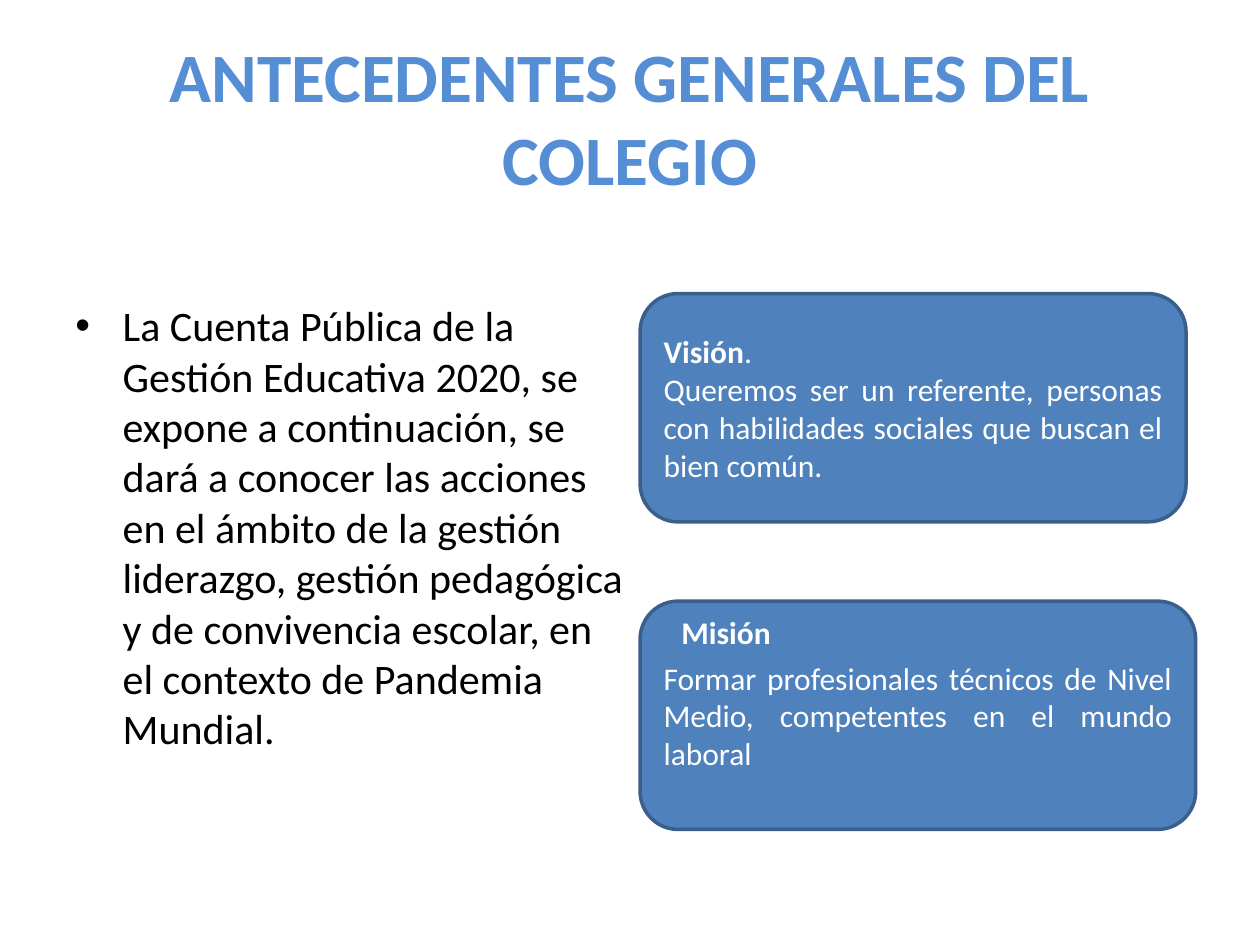
import pptx
import pptx.dml.color
import pptx.enum.shapes
import pptx.enum.text
import pptx.oxml
import pptx.oxml.ns
import pptx.util

Pt = pptx.util.Pt
Align = pptx.enum.text.PP_ALIGN
Anchor = pptx.enum.text.MSO_ANCHOR

FONT = "Calibri"
TITLE_BLUE = pptx.dml.color.RGBColor(0x55, 0x8E, 0xD5)
CARD_BLUE = pptx.dml.color.RGBColor(0x4F, 0x81, 0xBD)
CARD_BORDER = pptx.dml.color.RGBColor(0x3A, 0x5F, 0x8C)
WHITE = pptx.dml.color.RGBColor(0xFF, 0xFF, 0xFF)
BLACK = pptx.dml.color.RGBColor(0, 0, 0)

CARD_LEFT = 365.75
CARD_HEIGHT = 130.5
VISION_TOP = 167.75
MISSION_TOP = 343.5


def format_run(run, size, color, bold=False):
    run.font.name = FONT
    run.font.size = Pt(size)
    run.font.color.rgb = color
    run.font.bold = bold


def add_text(slide, box, text, size, color, bold=False, wrap=True):
    """Add a one-paragraph text box; box is left, top, width, height."""
    shape = slide.shapes.add_textbox(*map(Pt, box))
    shape.text_frame.word_wrap = wrap
    shape.text_frame.text = text
    format_run(shape.text_frame.paragraphs[0].runs[0], size, color, bold)
    return shape


def add_bullet(paragraph, indent):
    properties = paragraph._p.get_or_add_pPr()
    properties.set("marL", str(Pt(indent)))
    properties.set("indent", str(-Pt(indent)))
    namespace = pptx.oxml.ns.nsdecls("a")
    for xml in (f'<a:buFont {namespace} typeface="Arial"/>',
                f'<a:buChar {namespace} char="•"/>'):
        properties.append(pptx.oxml.parse_xml(xml))


def add_card(slide, top, width, body):
    """Add a rounded card with justified body text."""
    card = slide.shapes.add_shape(
        pptx.enum.shapes.MSO_SHAPE.ROUNDED_RECTANGLE,
        Pt(CARD_LEFT), Pt(top), Pt(width), Pt(CARD_HEIGHT))
    card.shadow.inherit = False
    card.fill.solid()
    card.fill.fore_color.rgb = CARD_BLUE
    card.line.color.rgb = CARD_BORDER
    card.line.width = Pt(2)
    text_frame = card.text_frame
    text_frame.word_wrap = True
    text_frame.vertical_anchor = Anchor.MIDDLE
    text_frame.text = body
    for paragraph in text_frame.paragraphs:
        paragraph.alignment = Align.JUSTIFY
        for run in paragraph.runs:
            format_run(run, 18, WHITE)
    return card


def add_vision(slide):
    card = add_card(slide, VISION_TOP, 312,
                    "Visión\nQueremos ser un referente, personas con "
                    "habilidades sociales que buscan el bien común.")
    heading = card.text_frame.paragraphs[0]
    heading.alignment = Align.LEFT
    heading.runs[0].font.bold = True
    period = heading.add_run()
    period.text = "."
    format_run(period, 18, WHITE)


def add_mission(slide):
    add_card(slide, MISSION_TOP, 317.5,
             "Formar profesionales técnicos de Nivel Medio, "
             "competentes en el mundo laboral ")
    add_text(slide, (382.25, 346.5, 66.25, 29), "Misión", 18, WHITE,
             bold=True, wrap=False)


def main():
    presentation = pptx.Presentation()
    presentation.slide_width = Pt(720)
    presentation.slide_height = Pt(540)
    slide = presentation.slides.add_slide(presentation.slide_layouts[6])

    title = add_text(slide, (36, 21.6, 648, 90),
                     "ANTECEDENTES GENERALES DEL COLEGIO", 39.6, TITLE_BLUE, bold=True)
    title.text_frame.vertical_anchor = Anchor.MIDDLE
    title.text_frame.paragraphs[0].alignment = Align.CENTER

    introduction = add_text(
        slide, (36, VISION_TOP, CARD_LEFT - 36, 314.5),
        "La Cuenta Pública de la Gestión Educativa 2020, se expone a continuación, "
        "se dará a conocer las acciones en el ámbito de la gestión liderazgo, "
        "gestión pedagógica y de convivencia escolar, en el contexto de Pandemia Mundial.",
        24, BLACK)
    add_bullet(introduction.text_frame.paragraphs[0], 27)

    add_vision(slide)
    add_mission(slide)
    presentation.save("out.pptx")


if __name__ == "__main__":
    main()
